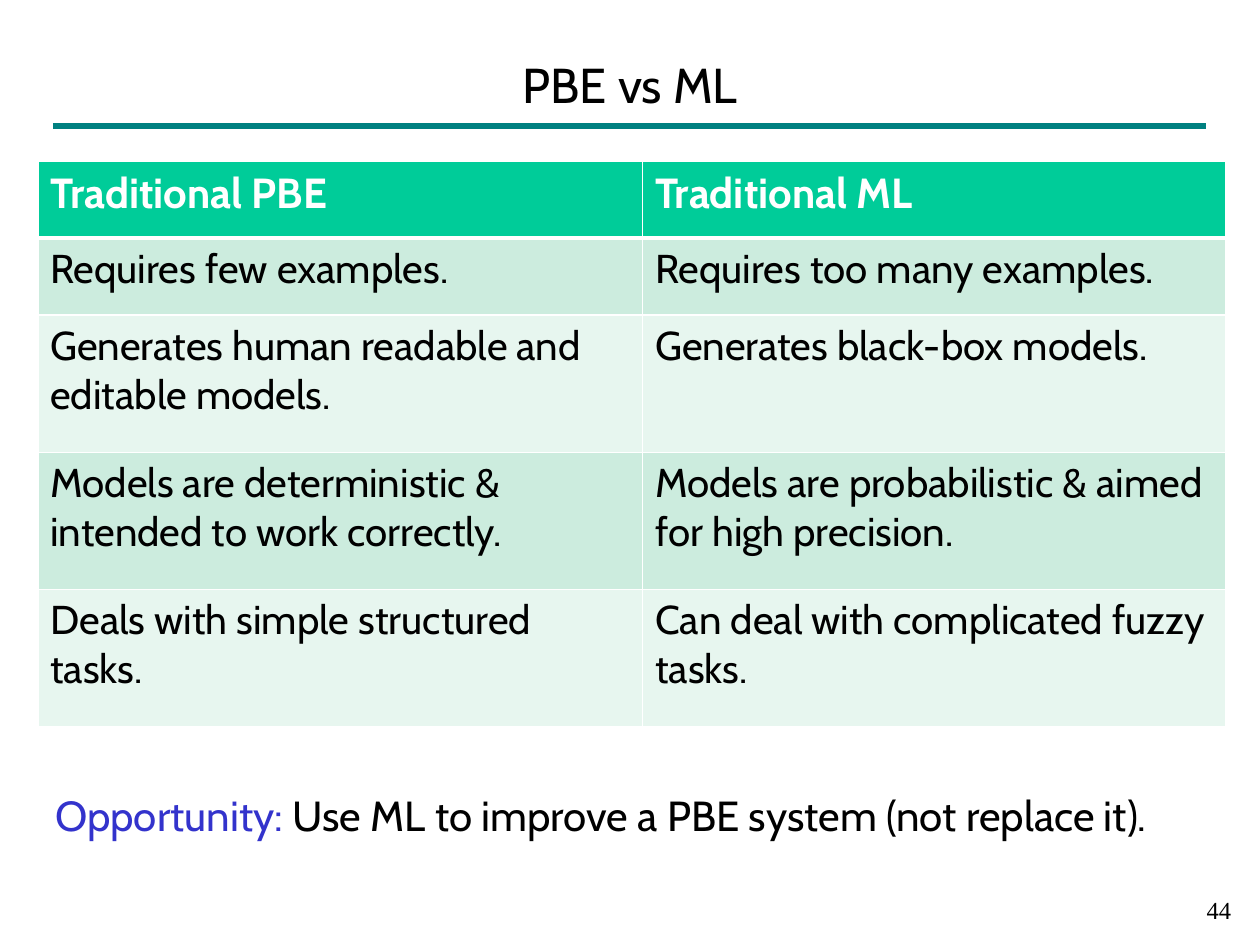
from pptx import Presentation
from pptx.dml.color import RGBColor
from pptx.enum.shapes import MSO_CONNECTOR as CONN
from pptx.enum.text import MSO_ANCHOR as ANCHOR, PP_ALIGN as ALIGN
from pptx.oxml import parse_xml
from pptx.oxml.ns import nsdecls
from pptx.util import Inches, Pt


def rgb(value):
    return RGBColor.from_string(value)


def add_run(p, text, fmt):
    r = p.add_run()
    r.text = text
    for name, value in fmt.items():
        if name == "color":
            r.font.color.rgb = rgb(value)
        else:
            setattr(r.font, name, value)


prs = Presentation()
prs.slide_width, prs.slide_height = Inches(10), Inches(7.5)
s = prs.slides.add_slide(prs.slide_layouts[6])

rule = s.shapes.add_connector(CONN.STRAIGHT, Inches(0.42), Inches(1), Inches(9.57), Inches(1))
rule.line.color.rgb = rgb("008080")
rule.line.width = Pt(4)
rule._element.spPr.append(parse_xml(f"<a:effectLst {nsdecls('a')}/>"))

rows = [
    ("Traditional PBE", "Traditional ML"),
    ("Requires few examples.", "Requires too many examples."),
    ("Generates human readable and editable models.", "Generates black-box models."),
    ("Models are deterministic & intended to work correctly.",
     "Models are probabilistic & aimed for high precision."),
    ("Deals with simple structured tasks.", "Can deal with complicated fuzzy tasks."),
]
widths = [4.8, 4.63]
heights = [0.61, 0.61, 1.09, 1.09, 1.09]
head_fmt = {"name": "Cabin", "size": Pt(24), "bold": True, "color": "FFFFFF"}
body_fmt = {"name": "Cabin", "size": Pt(23), "bold": False, "color": "000000"}

table = s.shapes.add_table(len(rows), len(widths), Inches(0.3), Inches(1.28),
                           Inches(sum(widths)), Inches(sum(heights))).table
for col, width in zip(table.columns, widths):
    col.width = Inches(width)
for i, (texts, height) in enumerate(zip(rows, heights)):
    table.rows[i].height = Inches(height)
    fill = "00CC99" if i == 0 else "CCECDE" if i % 2 else "E7F6EF"
    for j, text in enumerate(texts):
        cell = table.cell(i, j)
        for side in "LRTB":
            thick = (i, side) in [(0, "B"), (1, "T")]
            cell._tc.get_or_add_tcPr().append(parse_xml(
                f'<a:ln{side} {nsdecls("a")} w="{Pt(3 if thick else 1)}"><a:solidFill>'
                f'<a:srgbClr val="FFFFFF"/></a:solidFill></a:ln{side}>'))
        cell.fill.solid()
        cell.fill.fore_color.rgb = rgb(fill)
        add_run(cell.text_frame.paragraphs[0], text, body_fmt if i else head_fmt)

cabin = {"name": "Cabin", "size": Pt(24), "color": "000000"}
boxes = [
    ((7.79, 7.05, 2.08, 0.42), ALIGN.RIGHT, ANCHOR.TOP,
     [("44", {"name": "Times New Roman", "size": Pt(14), "color": "000000"})]),
    ((0.75, 0.33, 8.5, 0.67), ALIGN.CENTER, ANCHOR.MIDDLE,
     [("PBE vs ML", {**cabin, "size": Pt(28)})]),
    ((0.34, 6.22, 9.45, 0.5), ALIGN.LEFT, ANCHOR.TOP,
     [("Opportunity: ", {**cabin, "color": "3333CC"}),
      ("Use ML to improve a PBE system (not replace it).", cabin)]),
]
for place, align, anchor, runs in boxes:
    tf = s.shapes.add_textbox(*map(Inches, place)).text_frame
    tf.word_wrap = True
    tf.vertical_anchor = anchor
    p = tf.paragraphs[0]
    p.alignment = align
    for text, fmt in runs:
        add_run(p, text, fmt)

prs.save("out.pptx")
